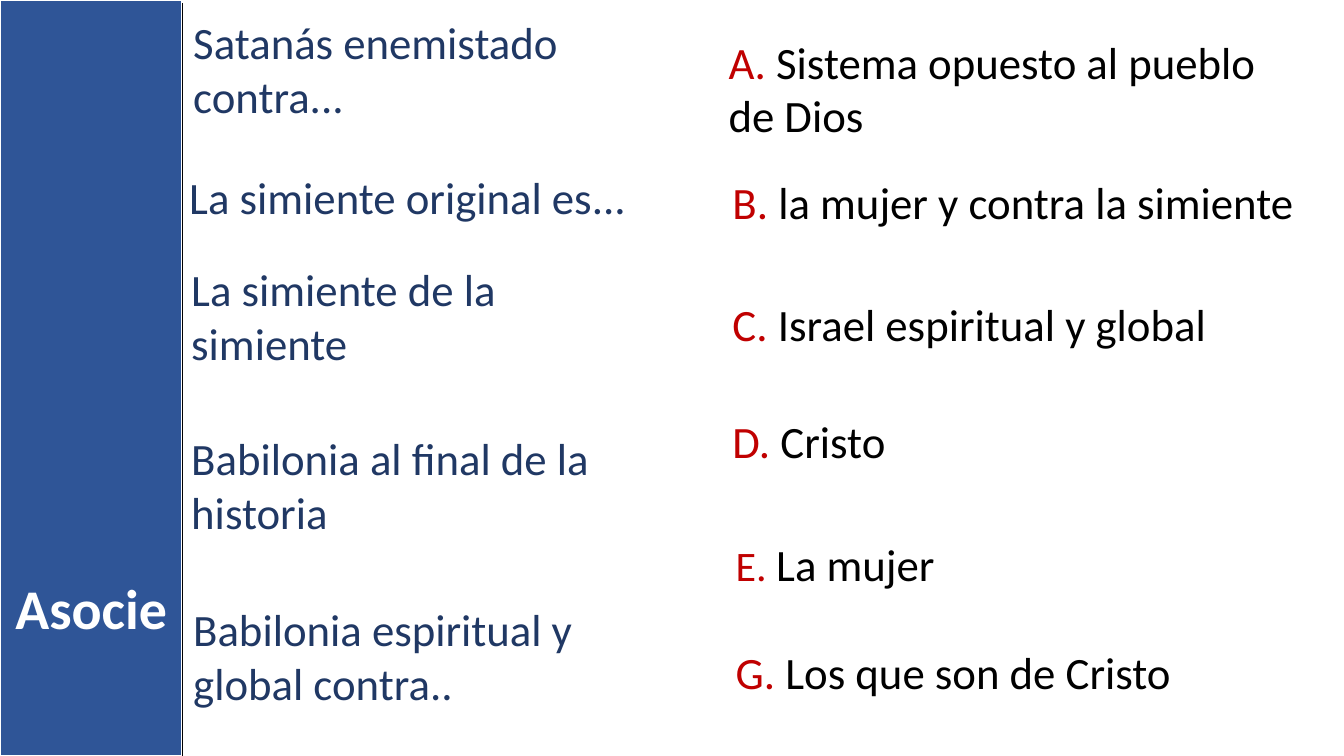
from dataclasses import dataclass

from lxml import etree
from pptx import Presentation
from pptx import util as u
from pptx.dml import color
from pptx.enum import shapes, text
from pptx.oxml import ns


@dataclass
class Theme:
    font: str = "Calibri"
    bar: str = "2F5597"
    white: str = "FFFFFF"
    prompt: str = "203864"
    letter: str = "C00000"
    answer: str = "000000"
    body: int = 32
    small: int = 30
    title: int = 40


theme = Theme()


def rgb(code):
    return color.RGBColor.from_string(code)


def add_text(left, top, width, height, runs, size=theme.body):
    box = slide.shapes.add_textbox(u.Cm(left), u.Cm(top), u.Cm(width), u.Cm(height))
    frame = box.text_frame
    frame.word_wrap = True
    frame.auto_size = text.MSO_AUTO_SIZE.SHAPE_TO_FIT_TEXT
    para = frame.paragraphs[0]
    para.font.name = theme.font
    para.font.size = u.Pt(size)
    for words, code in runs:
        run = para.add_run()
        run.text = words
        run.font.color.rgb = rgb(code)
    return para


deck = Presentation()
deck.slide_width, deck.slide_height = u.Cm(33.87), u.Cm(19.05)
slide = deck.slides.add_slide(deck.slide_layouts[6])

# Side bar
bar_width = 4.6
bar = slide.shapes.add_shape(
    shapes.MSO_SHAPE.RECTANGLE, 0, 0, u.Cm(bar_width), deck.slide_height)
bar.shadow.inherit = False
bar.fill.solid()
bar.fill.fore_color.rgb = rgb(theme.bar)
bar.line.color.rgb = rgb(theme.white)
bar.line.width = u.Pt(1.5)

# Line heights of the text boxes
one, two = 1.62, 2.99

# Prompts to match
prompts = [
    (4.62, 0.25, 13.34, two, "Satanás enemistado contra..."),
    (4.52, 4.14, 11.73, one, "La simiente original es..."),
    (4.57, 6.48, 11.68, two, "La simiente de la simiente"),
    (4.57, 10.74, 11.68, two, "Babilonia al final de la historia"),
    (4.62, 15.04, 11.2, two, "Babilonia espiritual y global contra.."),
]
for *place, words in prompts:
    add_text(*place, [(words, theme.prompt)])

# Answers with red letters
answers = [
    (18.11, 0.74, 14.22, two, "A", "Sistema opuesto al pueblo de Dios"),
    (18.21, 4.29, 15.04, one, "B", "la mujer y contra la simiente"),
    (18.21, 7.34, 14.58, one, "C", "Israel espiritual y global"),
    (18.21, 10.31, 14.73, one, "D", "Cristo"),
    (18.29, 13.41, 14.05, one, "E", "La mujer"),
    (18.29, 16.13, 14.2, one, "G", "Los que son de Cristo"),
]
for *place, letter, words in answers:
    para = add_text(*place, [(f"{letter}. ", theme.letter), (words, theme.answer)])
    if letter == "E":
        para.runs[0].font.size = u.Pt(theme.small)

# Title on the bar
title = add_text(0, 14.33, bar_width, 1.96, [("Asocie", theme.white)], theme.title)
title.alignment = text.PP_ALIGN.CENTER
title.font.bold = True

# Edge of the bar
edge = slide.shapes.add_connector(
    shapes.MSO_CONNECTOR.STRAIGHT,
    u.Cm(bar_width), u.Cm(0.08), u.Cm(bar_width), deck.slide_height)
edge.line.color.rgb = rgb(theme.answer)
edge.line.width = u.Pt(1)
props = edge._element.find(ns.qn("p:spPr"))
etree.SubElement(props, ns.qn("a:effectLst"))

deck.save("out.pptx")
